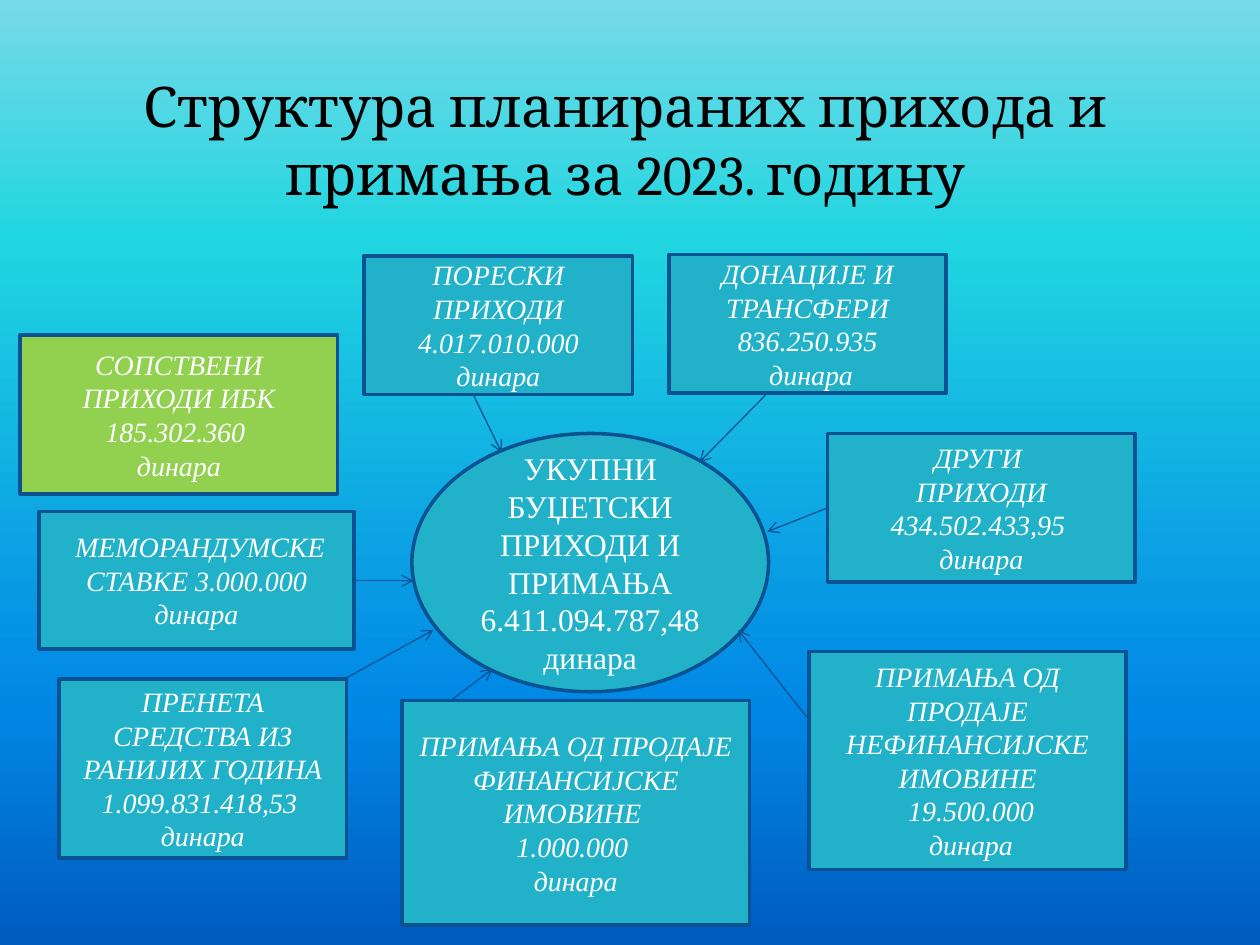
from dataclasses import dataclass

from lxml.etree import SubElement
from pptx import Presentation
from pptx.dml.color import RGBColor
from pptx.enum.shapes import MSO_CONNECTOR as Connector, MSO_SHAPE as Shape
from pptx.enum.text import MSO_ANCHOR as Anchor, MSO_AUTO_SIZE as AutoSize, PP_ALIGN as Align
from pptx.oxml.ns import qn
from pptx.util import Pt


@dataclass(frozen=True)
class Theme:
    sky: tuple = ((0, "77D9E8"), (25, "21D6E0"), (75, "0087E6"), (100, "005CBF"))
    title: str = "000000"
    text: str = "FFFFFF"
    teal: str = "21B2C9"
    green: str = "92D050"
    outline: str = "0B5292"
    arrow: str = "095295"
    title_font: str = "Cambria"
    body_font: str = "Times New Roman"
    title_size: int = 32
    total_size: int = 18
    source_size: int = 16
    outline_width: float = 2
    arrow_width: float = 0.75


THEME = Theme()

TITLE = "Структура планираних прихода и примања за 2023. годину"
TITLE_BOX = (20, 37.5, 675, 85)
DIAGRAM_BOX = (11.5, 145.5, 637, 383)

# Places below are relative to the diagram box: left, top, width, height
TOTAL = ((223.9, 102.2, 203.8, 147.6),
         ["УКУПНИ БУЏЕТСКИ ПРИХОДИ И ПРИМАЊА", "6.411.094.787,48 динара"])

# Each source: place, fill, paragraphs, arrow (start x, y, end x, y)
SOURCES = [
    ((370.8, 0, 158.4, 79.2), THEME.teal,
     ["ДОНАЦИЈЕ И ТРАНСФЕРИ", "836.250.935", " динара"],
     (427, 79.2, 388.1, 118.7)),
    ((461.5, 102.2, 175.7, 85), THEME.teal,
     ["ДРУГИ ", "ПРИХОДИ", "434.502.433,95 ", "динара"],
     (461.5, 144.7, 427, 158.3)),
    ((450.7, 226.7, 181.4, 124.6), THEME.teal,
     ["ПРИМАЊА ОД ПРОДАЈЕ НЕФИНАНСИЈСКЕ ИМОВИНЕ", " 19.500.000", " динара"],
     (450, 264.9, 410.4, 214.5)),
    ((196.6, 0.7, 153.4, 79.2), THEME.teal,
     ["ПОРЕСКИ ПРИХОДИ", "4.017.010.000 динара"],
     (258.5, 79.2, 275.1, 113)),
    ((0, 46, 181.4, 90.7), THEME.green,
     ["СОПСТВЕНИ ПРИХОДИ ИБК 185.302.360 ", "динара"],
     None),
    ((22.3, 242.6, 164.2, 102.2), THEME.teal,
     ["ПРЕНЕТА СРЕДСТВА ИЗ РАНИЈИХ ГОДИНА 1.099.831.418,53 ", "динара"],
     (185.1, 242.6, 236.2, 214.5)),
    ((218.2, 254.8, 198.7, 128.2), THEME.teal,
     ["ПРИМАЊА ОД ПРОДАЈЕ ФИНАНСИЈСКЕ ИМОВИНЕ ", "1.000.000 ", "динара"],
     (247, 254.1, 270, 236.8)),
    ((10.8, 146.8, 180, 78.5), THEME.teal,
     [" МЕМОРАНДУМСКЕ СТАВКЕ 3.000.000", "динара"],
     (190.8, 186.4, 224.7, 186.4)),
]


def rgb(color):
    return RGBColor.from_string(color)


def write(frame, lines, font, size, color, italic=False):
    """Fill a text frame with centred paragraphs."""
    frame.word_wrap = True
    for number, line in enumerate(lines):
        para = frame.add_paragraph() if number else frame.paragraphs[0]
        para.alignment = Align.CENTER
        span = para.add_run()
        span.text = line
        span.font.name = font
        span.font.size = Pt(size)
        span.font.italic = italic
        span.font.color.rgb = rgb(color)


def paint_background(page):
    fill = page.background.fill
    fill.gradient()
    fill.gradient_angle = 270
    # Replace the two default stops with the theme's four
    stops = page.background._cSld.find(".//" + qn("a:gsLst"))
    for stop in list(stops):
        stops.remove(stop)
    for percent, color in THEME.sky:
        stop = SubElement(stops, qn("a:gs"), pos=str(percent * 1000))
        SubElement(stop, qn("a:srgbClr"), val=color)


def draw_title(page, box):
    title = page.shapes.title
    title.left, title.top, title.width, title.height = map(Pt, box)
    write(title.text_frame, [TITLE], THEME.title_font, THEME.title_size, THEME.title)
    title.text_frame.vertical_anchor = Anchor.TOP
    title.text_frame.auto_size = AutoSize.SHAPE_TO_FIT_TEXT


def draw_node(page, box, kind, place, fill, lines, size, italic):
    left, top, width, height = place
    node = page.shapes.add_shape(
        kind, Pt(box[0] + left), Pt(box[1] + top), Pt(width), Pt(height))
    node.shadow.inherit = False
    node.fill.solid()
    node.fill.fore_color.rgb = rgb(fill)
    node.line.color.rgb = rgb(THEME.outline)
    node.line.width = Pt(THEME.outline_width)
    node.text_frame.vertical_anchor = Anchor.MIDDLE
    write(node.text_frame, lines, THEME.body_font, size, THEME.text, italic)


def draw_arrow(page, box, ends):
    x, y = box[:2]
    start_x, start_y, end_x, end_y = ends
    arrow = page.shapes.add_connector(
        Connector.STRAIGHT, Pt(x + start_x), Pt(y + start_y), Pt(x + end_x), Pt(y + end_y))
    arrow.line.color.rgb = rgb(THEME.arrow)
    arrow.line.width = Pt(THEME.arrow_width)
    SubElement(arrow.line._get_or_add_ln(), qn("a:tailEnd"), type="arrow")
    SubElement(arrow._element.spPr, qn("a:effectLst"))


def draw_diagram(page, box):
    # Total in the middle
    place, lines = TOTAL
    draw_node(page, box, Shape.OVAL, place, THEME.teal, lines, THEME.total_size, False)
    # Sources around it, each pointing at the total
    for place, fill, lines, ends in SOURCES:
        draw_node(page, box, Shape.RECTANGLE, place, fill, lines, THEME.source_size, True)
        if ends:
            draw_arrow(page, box, ends)


def main():
    deck = Presentation()
    deck.slide_width, deck.slide_height = Pt(720), Pt(540)
    page = deck.slides.add_slide(deck.slide_layouts.get_by_name("Title Only"))
    paint_background(page)
    draw_title(page, TITLE_BOX)
    draw_diagram(page, DIAGRAM_BOX)
    deck.save("out.pptx")


if __name__ == "__main__":
    main()
